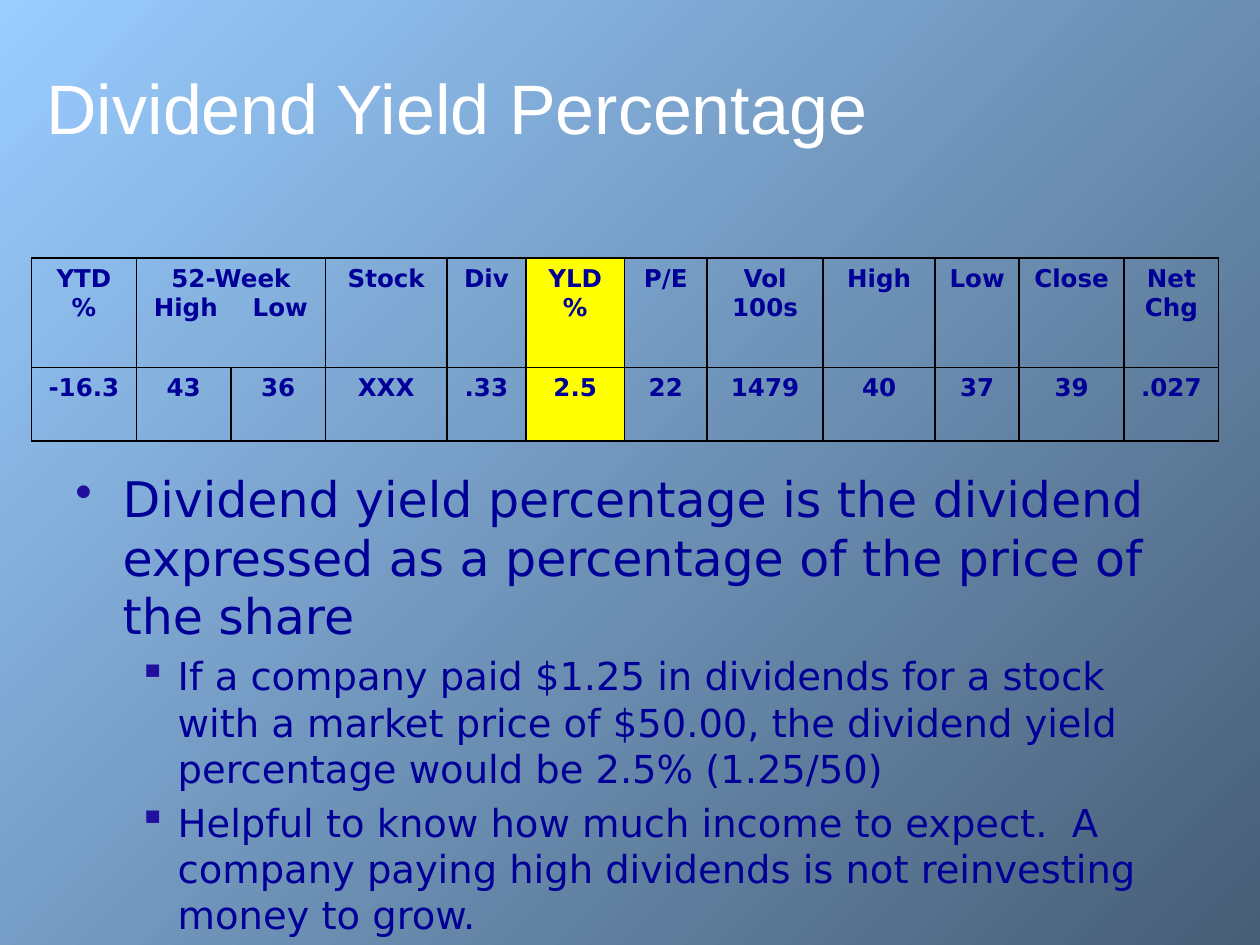
from lxml import etree
from pptx import Presentation
from pptx.dml.color import RGBColor
from pptx.enum.text import MSO_ANCHOR, PP_ALIGN
from pptx.oxml.ns import qn
from pptx.util import Pt

BOTTOM = MSO_ANCHOR.BOTTOM
LEFT, CENTER = PP_ALIGN.LEFT, PP_ALIGN.CENTER

SKY = RGBColor(0x99, 0xCC, 0xFF)
SLATE = RGBColor(0x47, 0x5E, 0x76)
WHITE = RGBColor(0xFF, 0xFF, 0xFF)
NAVY = RGBColor(0x00, 0x00, 0x99)
VIOLET = RGBColor(0x23, 0x0F, 0x9D)
YELLOW = RGBColor(0xFF, 0xFF, 0x00)
BLACK = RGBColor(0x00, 0x00, 0x00)

TITLE_FONT, BODY_FONT = "Arial", "DejaVu Sans"

COLUMN_WIDTHS = [60, 54, 54, 69.5, 45, 56.5, 47, 66.5, 64, 48, 60, 54]
ROW_HEIGHTS = [62.5, 42]
HEADINGS = ["YTD\n%", "52-Week\n\tHigh\tLow", "", "Stock", "Div", "YLD\n%",
            "P/E", "Vol\n100s", "High", "Low", "Close", "Net\nChg"]
QUOTE = ["-16.3", "43", "36", "XXX", ".33", "2.5",
         "22", "1479", "40", "37", "39", ".027"]
WEEK_COLUMN, YIELD_COLUMN = 1, 5
WEEK_TAB_STOPS = [21, 75]

# bullet, left margin, hanging indent, font size
BULLET_LEVELS = [("•", 27, 27, 28), ("▪", 58.5, 22.5, 22)]
POINTS = [
    (0, "Dividend yield percentage is the dividend expressed as a percentage "
        "of the price of the share"),
    (1, "If a company paid $1.25 in dividends for a stock with a market price "
        "of $50.00, the dividend yield percentage would be 2.5% (1.25/50)"),
    (1, "Helpful to know how much income to expect.  A company paying high "
        "dividends is not reinvesting money to grow."),
]


def style_font(paragraph, name, size, color, bold=False):
    font = paragraph.font
    font.name, font.size, font.bold = name, Pt(size), bold
    font.color.rgb = color


def add_solid_fill(parent, color):
    fill = etree.SubElement(parent, qn("a:solidFill"))
    etree.SubElement(fill, qn("a:srgbClr"), val=str(color))


def paint_background(slide):
    fill = slide.background.fill
    fill.gradient()
    fill.gradient_angle = 315
    for stop, color in zip(fill.gradient_stops, (SKY, SLATE)):
        stop.color.rgb = color


def add_text_frame(slide, left, top, width, height):
    box = slide.shapes.add_textbox(Pt(left), Pt(top), Pt(width), Pt(height))
    box.text_frame.word_wrap = True
    return box.text_frame


def add_title(slide, wording):
    frame = add_text_frame(slide, 19.5, 20, 680.5, 68.5)
    frame.vertical_anchor = BOTTOM
    frame.text = wording
    style_font(frame.paragraphs[0], TITLE_FONT, 40, WHITE)


def set_borders(cell):
    properties = cell._tc.get_or_add_tcPr()
    for side in ("lnL", "lnR", "lnT", "lnB"):
        line = etree.SubElement(properties, qn(f"a:{side}"), w=str(Pt(1)))
        add_solid_fill(line, BLACK)


def set_center_tabs(paragraph, positions):
    paragraph.alignment = LEFT
    tabs = etree.Element(qn("a:tabLst"))
    for position in positions:
        etree.SubElement(tabs, qn("a:tab"), pos=str(Pt(position)), algn="ctr")
    paragraph._p.get_or_add_pPr().insert(0, tabs)


def fill_cell(cell, wording, highlighted):
    set_borders(cell)
    if highlighted:
        cell.fill.solid()
        cell.fill.fore_color.rgb = YELLOW
    else:
        cell.fill.background()
    cell.text_frame.text = wording
    for paragraph in cell.text_frame.paragraphs:
        paragraph.alignment = CENTER
        style_font(paragraph, BODY_FONT, 14, NAVY, bold=True)


def add_quote_table(slide):
    rows = [HEADINGS, QUOTE]
    table = slide.shapes.add_table(
        len(rows), len(QUOTE), Pt(18), Pt(147.5),
        Pt(sum(COLUMN_WIDTHS)), Pt(sum(ROW_HEIGHTS))).table
    table.first_row = table.horz_banding = False
    for column, width in zip(table.columns, COLUMN_WIDTHS):
        column.width = Pt(width)
    for row, height in zip(table.rows, ROW_HEIGHTS):
        row.height = Pt(height)
    for r, wordings in enumerate(rows):
        for c, wording in enumerate(wordings):
            fill_cell(table.cell(r, c), wording, c == YIELD_COLUMN)
    week_heading = table.cell(0, WEEK_COLUMN)
    week_heading.merge(table.cell(0, WEEK_COLUMN + 1))
    set_center_tabs(week_heading.text_frame.paragraphs[1], WEEK_TAB_STOPS)


def set_bullet(paragraph, symbol, margin, hanging):
    properties = paragraph._p.get_or_add_pPr()
    properties.set("marL", str(Pt(margin)))
    properties.set("indent", str(-Pt(hanging)))
    add_solid = etree.SubElement(properties, qn("a:buClr"))
    etree.SubElement(add_solid, qn("a:srgbClr"), val=str(VIOLET))
    etree.SubElement(properties, qn("a:buChar"), char=symbol)


def add_points(slide):
    frame = add_text_frame(slide, 36, 264, 648, 240)
    for i, (level, wording) in enumerate(POINTS):
        paragraph = frame.add_paragraph() if i else frame.paragraphs[0]
        symbol, margin, hanging, size = BULLET_LEVELS[level]
        paragraph.text = wording
        paragraph.level = level
        set_bullet(paragraph, symbol, margin, hanging)
        paragraph.space_before = Pt(0.2 * size)
        style_font(paragraph, BODY_FONT, size, NAVY)


def main():
    deck = Presentation()
    deck.slide_width, deck.slide_height = Pt(720), Pt(540)
    slide = deck.slides.add_slide(deck.slide_layouts[6])
    paint_background(slide)
    add_title(slide, "Dividend Yield Percentage")
    add_quote_table(slide)
    add_points(slide)
    deck.save("out.pptx")


if __name__ == "__main__":
    main()
